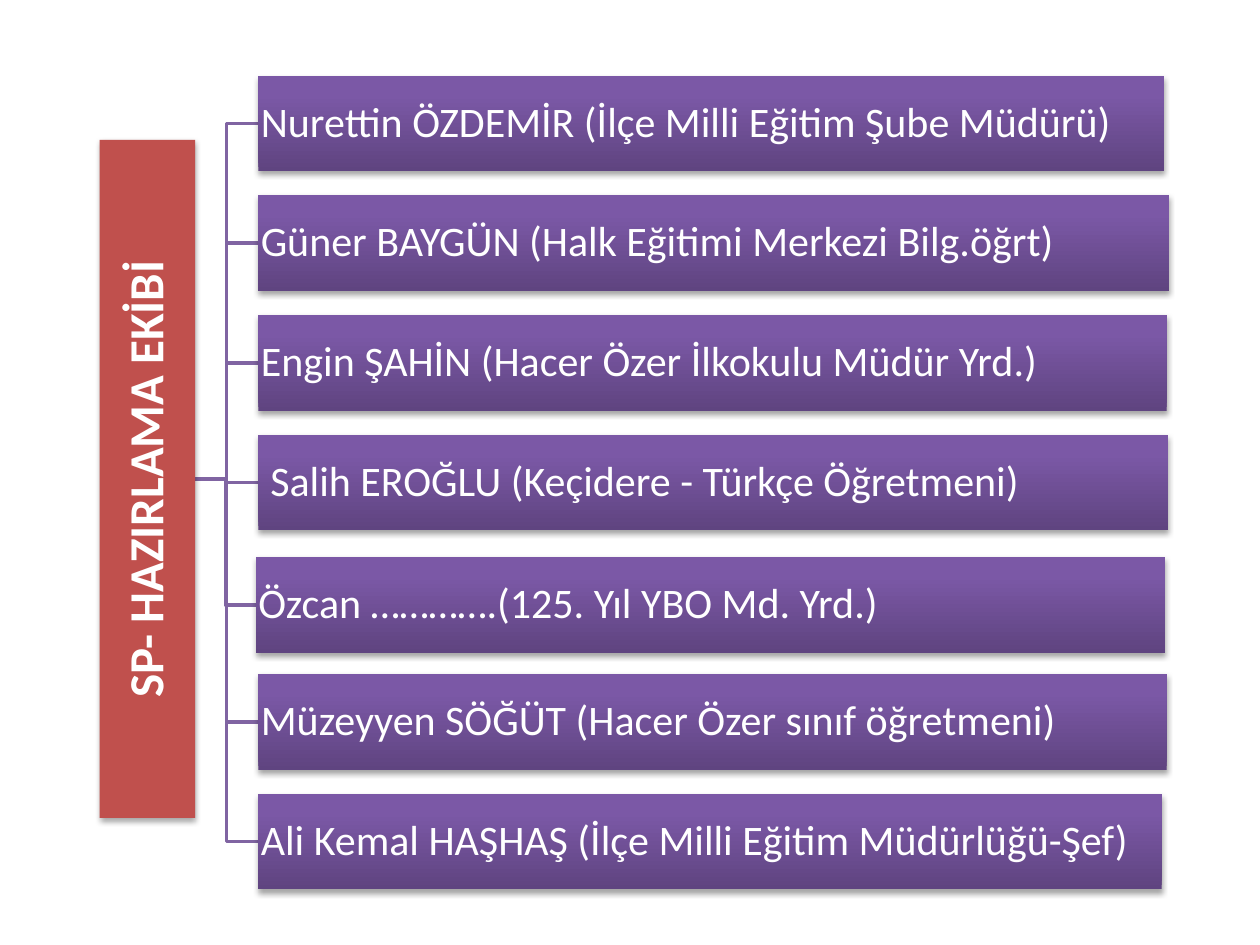
from copy import deepcopy

from lxml import etree
from pptx import Presentation, util as u
from pptx.dml.color import RGBColor
from pptx.enum import shapes, text
from pptx.oxml.ns import qn

TEAM = "SP- HAZIRLAMA EKİBİ"
# name and role, box width, shift right, shift down
MEMBERS = [
    ("Nurettin ÖZDEMİR (İlçe Milli Eğitim Şube Müdürü)", 7.19, 0, 0),
    ("Güner BAYGÜN (Halk Eğitimi Merkezi Bilg.öğrt)", 7.23, 0, 0),
    ("Engin ŞAHİN (Hacer Özer İlkokulu Müdür Yrd.)", 7.21, 0, 0),
    (" Salih EROĞLU (Keçidere - Türkçe Öğretmeni)", 7.22, 0, 0),
    ("Özcan ………….(125. Yıl YBO Md. Yrd.)", 7.22, -0.02, 0.02),
    ("Müzeyyen SÖĞÜT (Hacer Özer sınıf öğretmeni)", 7.21, 0, 0),
    ("Ali Kemal HAŞHAŞ (İlçe Milli Eğitim Müdürlüğü-Şef)", 7.17, 0, 0),
]
THEME = {
    "font": "Calibri",
    "team_size": 28,
    "member_size": 24,
    "text": "FFFFFF",
    "team": "C0504D",
    "line": "8064A2",
    "gradient": [(0, "5F4480"), (0.8, "7B58A6"), (1, "7C57A8")],
    "shadow": "000000",
}
BOX_HEIGHT, ROW_STEP = 0.76, 0.95
FIRST_LEFT, FIRST_TOP = 2.05, 0.6
TEAM_LENGTH, TEAM_RIGHT, TEAM_MIDDLE = 5.38, 1.55, 3.8


def color(name):
    return RGBColor.from_string(THEME[name])


def add_shadow(shape):
    shape.shadow.inherit = False
    effects = shape._element.spPr.find(qn("a:effectLst"))
    shadow = etree.SubElement(effects, qn("a:outerShdw"), blurRad="40000",
                              dist="23000", dir="5400000", rotWithShape="0")
    shade = etree.SubElement(shadow, qn("a:srgbClr"), val=THEME["shadow"])
    etree.SubElement(shade, qn("a:alpha"), val="35000")


def fill_gradient(shape):
    """Fill from bottom to top with the three theme stops."""
    shape.fill.gradient()
    shape.fill.gradient_angle = 90
    stop_list = shape._element.spPr.find(".//" + qn("a:gsLst"))
    stop_list.append(deepcopy(stop_list[-1]))
    for stop, (position, value) in zip(shape.fill.gradient_stops, THEME["gradient"]):
        stop.position = position
        stop.color.rgb = RGBColor.from_string(value)


def add_box(slide, left, top, width, words, size, alignment, bold=False):
    shape = slide.shapes.add_shape(
        shapes.MSO_SHAPE.RECTANGLE, u.Inches(left), u.Inches(top),
        u.Inches(width), u.Inches(BOX_HEIGHT))
    shape.line.fill.background()
    add_shadow(shape)
    frame = shape.text_frame
    frame.word_wrap = True
    frame.vertical_anchor = text.MSO_ANCHOR.MIDDLE
    frame.margin_left = frame.margin_right = u.Inches(0.02)
    frame.margin_top = frame.margin_bottom = u.Inches(0.02)
    paragraph = frame.paragraphs[0]
    paragraph.alignment = alignment
    paragraph.line_spacing = 0.9
    run = paragraph.add_run()
    run.text = words
    run.font.name = THEME["font"]
    run.font.size = u.Pt(size)
    run.font.bold = bold
    run.font.color.rgb = color("text")
    return shape


def add_branch(slide, left, middle):
    """Draw the elbow line from the team box to one member box."""
    bend = (TEAM_RIGHT + left) / 2
    corners = [(bend, TEAM_MIDDLE), (bend, middle), (left, middle)]
    builder = slide.shapes.build_freeform(u.Inches(TEAM_RIGHT), u.Inches(TEAM_MIDDLE))
    builder.add_line_segments(
        [(u.Inches(x), u.Inches(y)) for x, y in corners], close=False)
    branch = builder.convert_to_shape()
    branch.fill.background()
    branch.line.color.rgb = color("line")
    branch.line.width = u.Pt(2)
    branch.shadow.inherit = False


def main():
    presentation = Presentation()
    presentation.slide_width, presentation.slide_height = u.Inches(10), u.Inches(7.5)
    slide = presentation.slides.add_slide(presentation.slide_layouts[6])

    places = [(FIRST_LEFT + right, FIRST_TOP + row * ROW_STEP + down)
              for row, (_, _, right, down) in enumerate(MEMBERS)]
    for left, top in reversed(places):
        add_branch(slide, left, top + BOX_HEIGHT / 2)

    team_left = TEAM_RIGHT - (BOX_HEIGHT + TEAM_LENGTH) / 2
    team = add_box(slide, team_left, TEAM_MIDDLE - BOX_HEIGHT / 2, TEAM_LENGTH,
                   TEAM, THEME["team_size"], text.PP_ALIGN.CENTER, bold=True)
    team.rotation = 270
    team.fill.solid()
    team.fill.fore_color.rgb = color("team")

    for (words, width, _, _), (left, top) in zip(MEMBERS, places):
        member = add_box(slide, left, top, width, words,
                         THEME["member_size"], text.PP_ALIGN.LEFT)
        fill_gradient(member)

    presentation.save("out.pptx")


if __name__ == "__main__":
    main()
